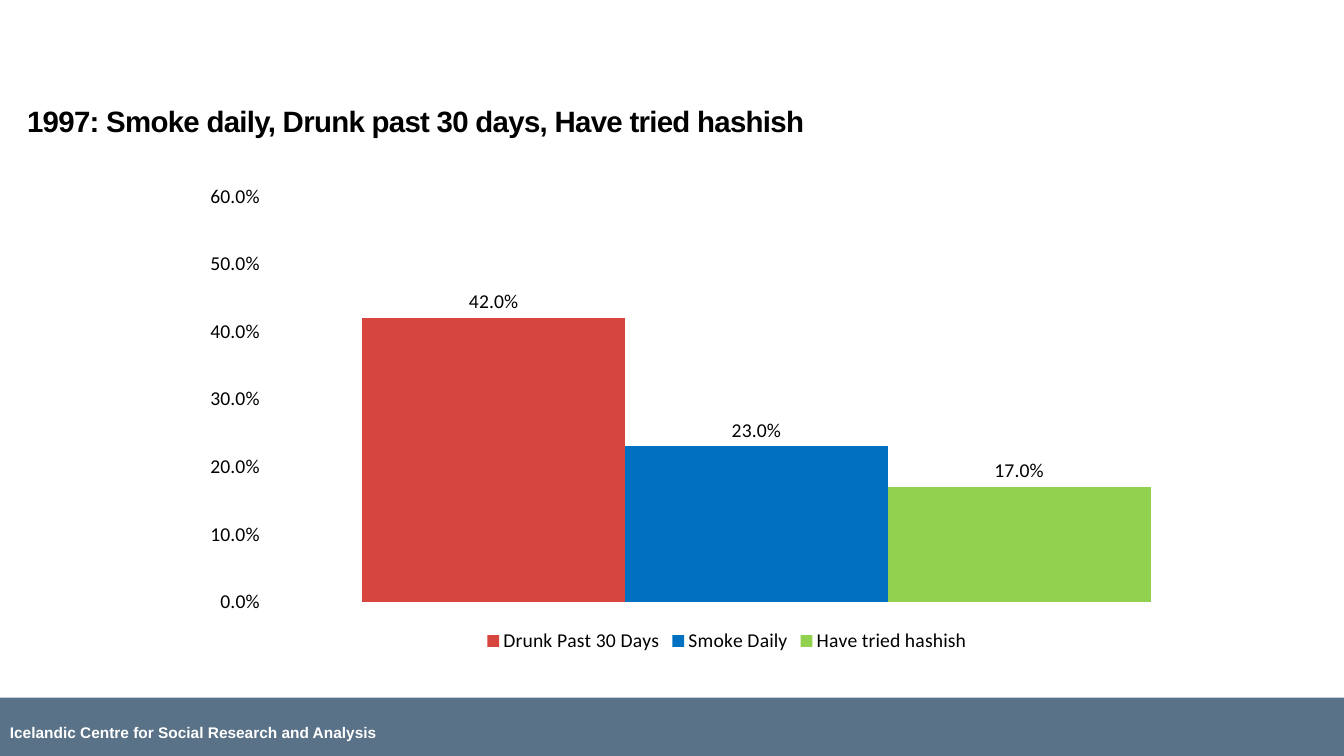
from dataclasses import dataclass

import pptx
import pptx.chart.data
import pptx.dml.color
import pptx.enum.chart
import pptx.enum.shapes
import pptx.enum.text
import pptx.oxml
import pptx.util
from pptx.util import Inches


@dataclass(frozen=True)
class Theme:
    text: str = "000000"
    footer: str = "597287"
    footer_text: str = "FFFFFF"
    heading_font: str = "Arial"
    chart_font: str = "Calibri"
    title_size: int = 21
    chart_size: int = 14
    footer_size: int = 11


theme = Theme()
rates = [
    ("Drunk Past 30 Days", 0.42, "D7453F"),
    ("Smoke Daily", 0.23, "0070C0"),
    ("Have tried hashish", 0.17, "92D050"),
]


def set_font(font, name, size, color, bold=False):
    font.name = name
    font.size = pptx.util.Pt(size)
    font.bold = bold
    font.color.rgb = pptx.dml.color.RGBColor.from_string(color)


def add_heading(slide, box, text, size, color, anchor):
    """Add a bold one-paragraph text box and return its paragraph."""
    frame = slide.shapes.add_textbox(*map(Inches, box)).text_frame
    frame.word_wrap = True
    frame.vertical_anchor = anchor
    paragraph = frame.paragraphs[0]
    paragraph.text = text
    set_font(paragraph.font, theme.heading_font, size, color, bold=True)
    return paragraph


prs = pptx.Presentation()
prs.slide_width, prs.slide_height = Inches(13.33), Inches(7.5)
slide = prs.slides.add_slide(prs.slide_layouts[6])

# Footer
footer_band = slide.shapes.add_shape(
    pptx.enum.shapes.MSO_SHAPE.RECTANGLE,
    Inches(0), Inches(6.92), prs.slide_width, Inches(0.58))
footer_band.shadow.inherit = False
footer_band.fill.solid()
footer_band.fill.fore_color.rgb = pptx.dml.color.RGBColor.from_string(theme.footer)
footer_band.line.fill.background()
add_heading(slide, (0, 7.12, 4.53, 0.29),
            "Icelandic Centre for Social Research and Analysis",
            theme.footer_size, theme.footer_text, pptx.enum.text.MSO_ANCHOR.TOP)

# Title
title = add_heading(slide, (0.17, 0, 8.61, 1.42),
                    "1997: Smoke daily, Drunk past 30 days, Have tried hashish",
                    theme.title_size, theme.text, pptx.enum.text.MSO_ANCHOR.BOTTOM)
title.line_spacing = 0.85
title.runs[0].font._element.set("spc", "-50")

# Chart
survey = pptx.chart.data.CategoryChartData(number_format="0.0%")
survey.categories = ["1"]
for name, rate, _ in rates:
    survey.add_series(name, [rate])
chart = slide.shapes.add_chart(
    pptx.enum.chart.XL_CHART_TYPE.COLUMN_CLUSTERED,
    Inches(1.87), Inches(1.83), Inches(10.68), Inches(4.69), survey).chart
set_font(chart.font, theme.chart_font, theme.chart_size, theme.text)
chart.has_title = False
chart.has_legend = True
chart.legend.position = pptx.enum.chart.XL_LEGEND_POSITION.BOTTOM
chart.legend.include_in_layout = False
set_font(chart.legend.font, theme.chart_font, theme.chart_size, theme.text)

chart.category_axis.visible = False
rate_axis = chart.value_axis
rate_axis.minimum_scale, rate_axis.maximum_scale, rate_axis.major_unit = 0, 0.6, 0.1
rate_axis.has_major_gridlines = False
rate_axis.major_tick_mark = pptx.enum.chart.XL_TICK_MARK.NONE
rate_axis.format.line.fill.background()
rate_axis.tick_labels.number_format = "0.0%"
rate_axis.tick_labels.number_format_is_linked = False
set_font(rate_axis.tick_labels.font, theme.chart_font, theme.chart_size, theme.text)

columns = chart.plots[0]
columns.vary_by_categories = False
columns.gap_width = 75
columns.overlap = 0
for series, (_, _, color) in zip(columns.series, rates):
    series.format.fill.solid()
    series.format.fill.fore_color.rgb = pptx.dml.color.RGBColor.from_string(color)
    labels = series.data_labels
    labels.show_value = True
    labels.position = pptx.enum.chart.XL_LABEL_POSITION.OUTSIDE_END
    labels.number_format = "0.0%"
    labels.number_format_is_linked = False
    set_font(labels.font, theme.chart_font, theme.chart_size, theme.text)

# Fixed inner plot area, as fractions of the chart
plot_area = chart._chartSpace.chart.plotArea
for old_layout in plot_area.xpath("c:layout"):
    plot_area.remove(old_layout)
plot_area.insert(0, pptx.oxml.parse_xml(
    '<c:layout xmlns:c="http://schemas.openxmlformats.org/drawingml/2006/chart">'
    '<c:manualLayout><c:layoutTarget val="inner"/>'
    '<c:xMode val="edge"/><c:yMode val="edge"/>'
    '<c:x val="0.07"/><c:y val="0.025"/><c:w val="0.915"/><c:h val="0.858"/>'
    '</c:manualLayout></c:layout>'))

prs.save("out.pptx")
